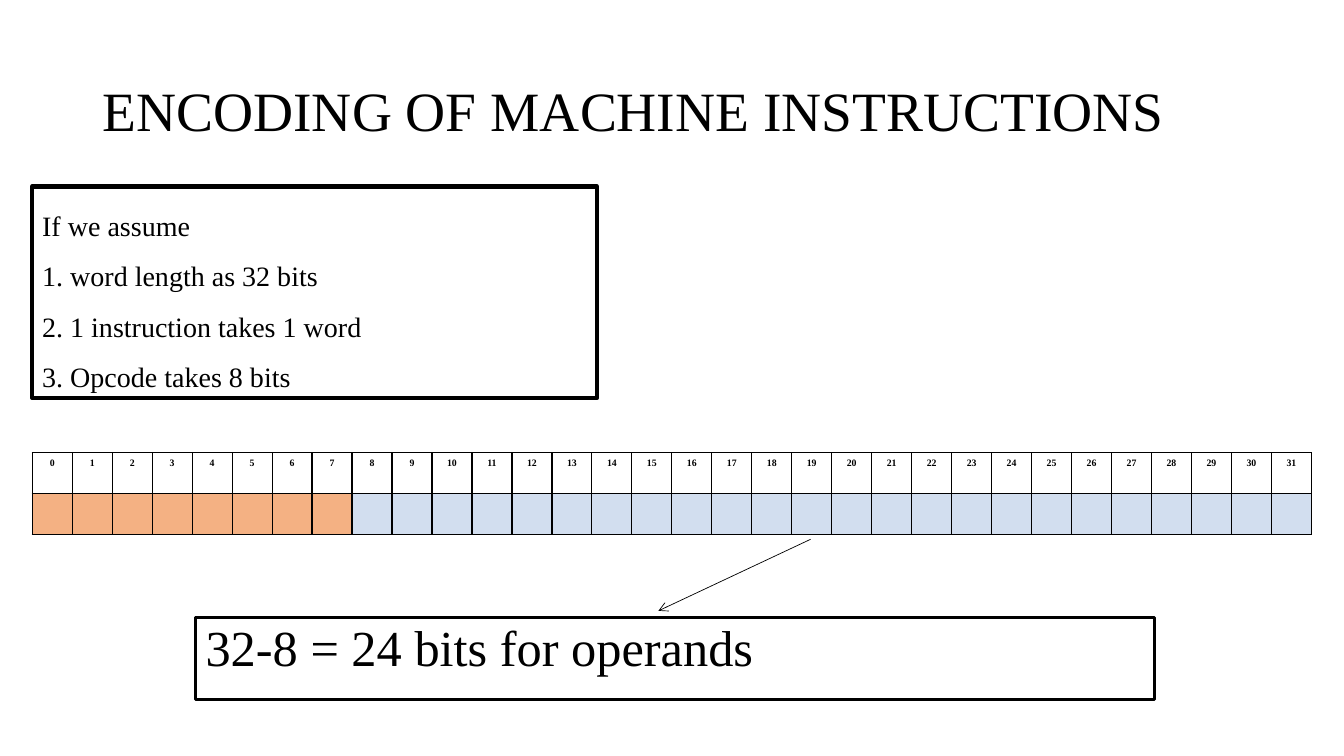
from lxml.etree import SubElement
from pptx import Presentation
from pptx.dml.color import RGBColor
from pptx.enum.shapes import MSO_CONNECTOR, MSO_SHAPE
from pptx.enum.text import MSO_ANCHOR, PP_ALIGN
from pptx.oxml.ns import qn
from pptx.util import Inches, Pt

BLACK = RGBColor(0x00, 0x00, 0x00)
WHITE = RGBColor(0xFF, 0xFF, 0xFF)
ORANGE = RGBColor(0xF4, 0xB1, 0x83)
BLUE = RGBColor(0xD2, 0xDE, 0xEF)
FONT = "Times New Roman"
WORD, OPCODE = 32, 8


def add_run(para, text, size, bold=False):
    run = para.add_run()
    run.text = text
    run.font.name = FONT
    run.font.size = Pt(size)
    run.font.bold = bold
    run.font.color.rgb = BLACK


def add_title(slide, box, text):
    frame = slide.shapes.add_textbox(*map(Inches, box)).text_frame
    frame.word_wrap = True
    frame.vertical_anchor = MSO_ANCHOR.MIDDLE
    para = frame.paragraphs[0]
    para.line_spacing = 0.9
    add_run(para, text, 39.6)


def add_panel(slide, box, lines, size, weight, spacing, before=0):
    """Draw an outlined box with one left-aligned paragraph per line."""
    panel = slide.shapes.add_shape(MSO_SHAPE.RECTANGLE, *map(Inches, box))
    panel.shadow.inherit = False
    panel.fill.background()
    panel.line.color.rgb = BLACK
    panel.line.width = Pt(weight)
    frame = panel.text_frame
    frame.word_wrap = True
    frame.vertical_anchor = MSO_ANCHOR.TOP
    for i, text in enumerate(lines):
        para = frame.add_paragraph() if i else frame.paragraphs[0]
        para.alignment = PP_ALIGN.LEFT
        para.line_spacing = spacing
        para.space_before = Pt(before)
        add_run(para, text, size)


def add_borders(cell):
    props = cell._tc.get_or_add_tcPr()
    for i, side in enumerate(("a:lnL", "a:lnR", "a:lnT", "a:lnB")):
        line = props.makeelement(qn(side), {"w": str(Pt(1))})
        fill = SubElement(line, qn("a:solidFill"))
        SubElement(fill, qn("a:srgbClr"), val=str(BLACK))
        props.insert(i, line)


def add_bits(slide, box):
    """Number the bits of a word above cells that mark opcode and operands."""
    left, top, width, height = map(Inches, box)
    table = slide.shapes.add_table(2, WORD, left, top, width, height).table
    for row in table.rows:
        row.height = height // 2
    for bit, column in enumerate(table.columns):
        column.width = width // WORD
        head, body = table.cell(0, bit), table.cell(1, bit)
        para = head.text_frame.paragraphs[0]
        para.alignment = PP_ALIGN.CENTER
        add_run(para, str(bit), 7, bold=True)
        for cell, color in ((head, WHITE), (body, ORANGE if bit < OPCODE else BLUE)):
            cell.fill.solid()
            cell.fill.fore_color.rgb = color
            add_borders(cell)


def add_arrow(slide, start, end):
    arrow = slide.shapes.add_connector(
        MSO_CONNECTOR.STRAIGHT, *map(Inches, start + end))
    arrow.line.color.rgb = BLACK
    arrow.line.width = Pt(0.5)
    SubElement(arrow.line._get_or_add_ln(), qn("a:tailEnd"), type="arrow")
    SubElement(arrow._element.spPr, qn("a:effectLst"))


def main():
    deck = Presentation()
    deck.slide_width, deck.slide_height = Inches(13.33), Inches(7.5)
    slide = deck.slides.add_slide(deck.slide_layouts[6])
    add_title(slide, (0.92, 0.4, 11.5, 1.45), "ENCODING OF MACHINE INSTRUCTIONS")
    add_bits(slide, (0.32, 4.49, 12.69, 0.81))
    add_panel(slide, (0.32, 1.85, 5.6, 2.1), (
        "If we assume",
        "1. word length as 32 bits",
        "2. 1 instruction takes 1 word",
        "3. Opcode takes 8 bits",
    ), 20, 3, 1.5)
    add_panel(slide, (1.94, 6.13, 9.51, 0.81),
              ("32-8 = 24 bits for operands",), 36, 2.25, 0.9, before=10)
    add_arrow(slide, (8.04, 5.35), (6.53, 6.06))
    deck.save("out.pptx")


if __name__ == "__main__":
    main()
